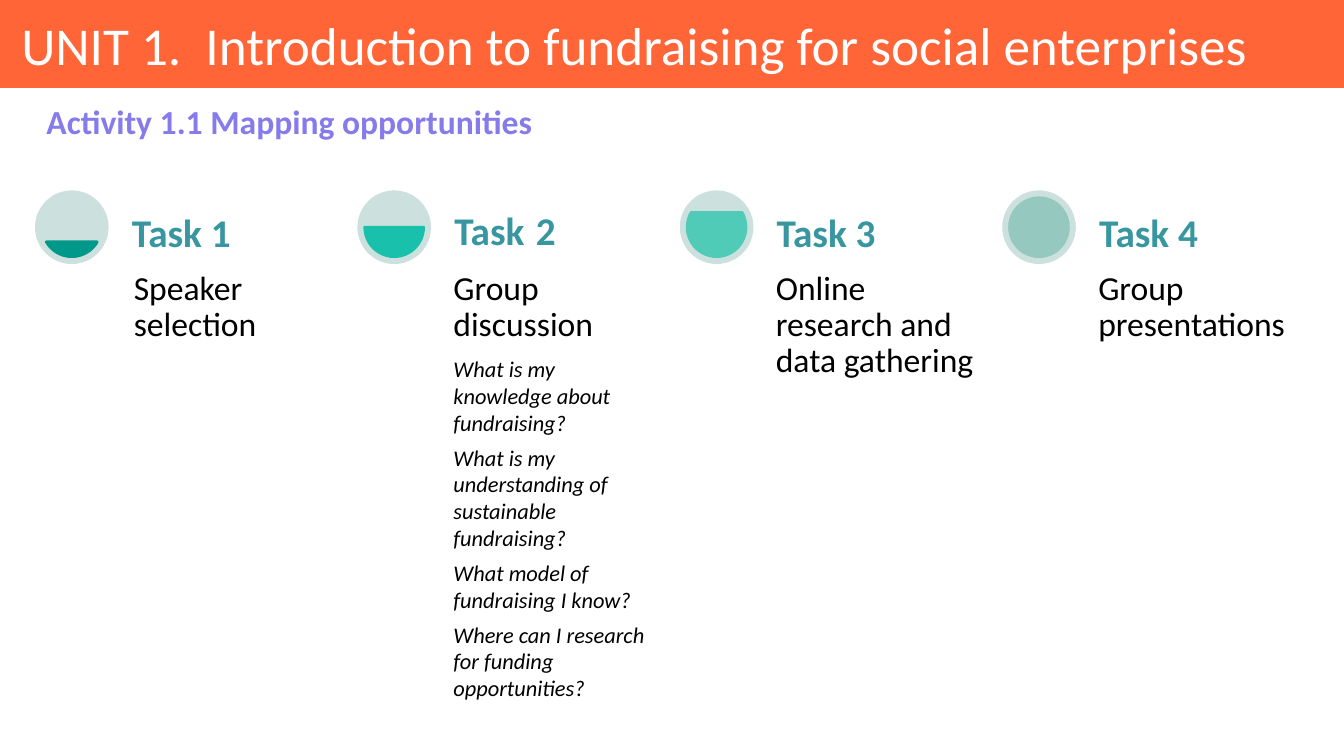
from lxml import etree
from pptx import Presentation
from pptx.dml.color import RGBColor
from pptx.enum.shapes import MSO_SHAPE
from pptx.enum.text import MSO_ANCHOR, MSO_AUTO_SIZE, PP_ALIGN
from pptx.oxml.ns import qn
from pptx.util import Pt

RECT, OVAL, CHORD = MSO_SHAPE.RECTANGLE, MSO_SHAPE.OVAL, MSO_SHAPE.CHORD
TOP, MIDDLE, BOTTOM = MSO_ANCHOR.TOP, MSO_ANCHOR.MIDDLE, MSO_ANCHOR.BOTTOM
LEFT, JUSTIFY = PP_ALIGN.LEFT, PP_ALIGN.JUSTIFY

WHITE = RGBColor(0xFF, 0xFF, 0xFF)
BLACK = RGBColor(0, 0, 0)
ORANGE = RGBColor(0xFF, 0x65, 0x37)
PURPLE = RGBColor(0x86, 0x7B, 0xEA)
TEAL = RGBColor(0x37, 0x96, 0x9F)
PALE = RGBColor(0xCC, 0xE1, 0xDD)
GAUGE_1 = RGBColor(0x00, 0x98, 0x89)
GAUGE_2 = RGBColor(0x19, 0xC1, 0xAC)
GAUGE_3 = RGBColor(0x50, 0xCB, 0xB8)
GAUGE_4 = RGBColor(0x95, 0xC8, 0xBF)


def add_run(p, text, size=24, color=BLACK, bold=False, italic=False,
            font="Calibri"):
    r = p.add_run()
    r.text = text
    r.font.name, r.font.size = font, Pt(size)
    r.font.bold, r.font.italic = bold, italic
    r.font.color.rgb = color


class Deck:
    def __init__(self, width, height):
        self.prs = Presentation()
        self.prs.slide_width, self.prs.slide_height = Pt(width), Pt(height)
        self.s = self.prs.slides.add_slide(self.prs.slide_layouts[1])
        fill = self.s.background.fill
        fill.solid()
        fill.fore_color.rgb = WHITE

    def shape(self, kind, x, y, w, h, color, line=0):
        sp = self.s.shapes.add_shape(kind, Pt(x), Pt(y), Pt(w), Pt(h))
        sp.shadow.inherit = False
        sp.fill.solid()
        sp.fill.fore_color.rgb = color
        if line:
            sp.line.color.rgb = color
            sp.line.width = Pt(line)
        else:
            sp.line.fill.background()
        return sp

    def frame(self, sp, anchor, insets):
        tf = sp.text_frame
        tf.word_wrap = True
        tf.auto_size = MSO_AUTO_SIZE.NONE
        tf.vertical_anchor = anchor
        (tf.margin_left, tf.margin_top,
         tf.margin_right, tf.margin_bottom) = [Pt(i) for i in insets]
        return tf

    def placeholder(self, index, x, y, w, h, insets, align):
        sp = self.s.placeholders[index]
        sp.left, sp.top, sp.width, sp.height = Pt(x), Pt(y), Pt(w), Pt(h)
        p = self.frame(sp, MIDDLE, insets).paragraphs[0]
        p.alignment = align
        p.line_spacing = 0.9
        return sp, p

    def text(self, x, y, w, h, anchor, inset):
        sp = self.s.shapes.add_textbox(Pt(x), Pt(y), Pt(w), Pt(h))
        return self.frame(sp, anchor, [inset] * 4)

    def gauge(self, x, y, color, start, end):
        self.shape(OVAL, x, y, 52.6, 52.6, PALE)
        level = self.shape(CHORD, x + 5.3, y + 5.3, 42, 42, color, line=2)
        # Angles in degrees; one adjustment unit is 100000 / 60000 degrees
        level.adjustments[0] = start * 0.6
        level.adjustments[1] = end * 0.6


def main():
    deck = Deck(960, 540)

    # Title band, placed behind the title
    band = deck.shape(RECT, 0, 0, 960, 62.8, ORANGE)
    deck.s.shapes._spTree.insert(2, band._element)
    _, p = deck.placeholder(0, 8, 6.5, 940, 56, (7.2, 4.3, 4.3, 4.3), LEFT)
    add_run(p, "UNIT 1.  Introduction to fundraising for social enterprises",
            size=38, color=WHITE)

    # Activity heading
    sp, p = deck.placeholder(1, 8, 67, 940, 43, (7.2, 3.6, 7.2, 3.6), JUSTIFY)
    sp.line.color.rgb = WHITE
    sp.line.width = Pt(0.75)
    p.space_before = Pt(10)
    pPr = p._p.get_or_add_pPr()
    pPr.set("marL", str(Pt(36)))
    pPr.set("indent", str(Pt(-18)))
    etree.SubElement(pPr, qn("a:buNone"))
    add_run(p, "Activity 1.1 Mapping opportunities", color=PURPLE, bold=True)

    # Four task columns: gauge, heading, description and questions
    questions = ["What is my knowledge about fundraising?",
                 "What is my understanding of sustainable fundraising?",
                 "What model of fundraising I know?",
                 "Where can I research for funding opportunities?"]
    # colour, chord angles, heading runs, text, questions, text shift
    tasks = [
        (GAUGE_1, 30, 150, [("Task 1", 28)], "Speaker selection", [], 2),
        (GAUGE_2, 0, 180, [("Task", 28), (" ", 36), ("2", 28)],
         "Group discussion", questions, 0),
        (GAUGE_3, 330, 210, [("Task 3", 28)],
         "Online research and data gathering", [], 0),
        (GAUGE_4, 270, 270, [("Task 4", 28)], "Group presentations", [], 0),
    ]
    left, top, pitch = 25, 136, 230.3
    for i, (color, start, end, heading, text, asks, shift) in enumerate(tasks):
        x = left + i * pitch
        deck.gauge(x, top, color, start, end)

        tf = deck.text(x + 63.6 + shift, top + 52.6, 155.6, 222, TOP, 5)
        p = tf.paragraphs[0]
        p.line_spacing = 0.9
        p.space_after = Pt(8.4)
        add_run(p, text)
        for ask in asks:
            p = tf.add_paragraph()
            p.space_after = Pt(5.6)
            add_run(p, ask, size=16, italic=True)

        p = deck.text(x + 63.6, top, 155.6, 52.6, BOTTOM, 5.6).paragraphs[0]
        p.line_spacing = 0.9
        for part, size in heading:
            add_run(p, part, size=size, color=TEAL, bold=True)

    deck.prs.save("out.pptx")


if __name__ == "__main__":
    main()
